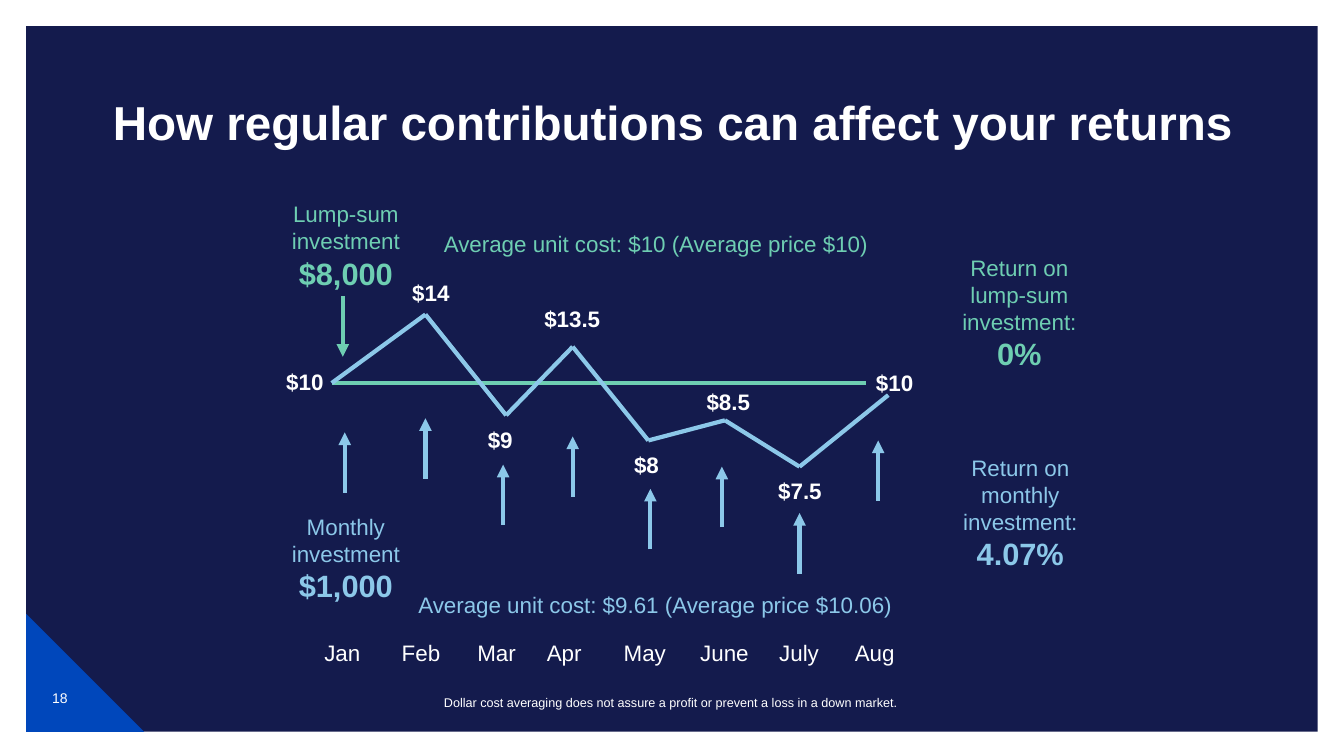
import itertools

import lxml.etree
import pptx
import pptx.dml.color
import pptx.enum.shapes
import pptx.enum.text
import pptx.oxml.ns
import pptx.util

PX = 9144
COLORS = {
    "navy": "141B4D",
    "blue": "0047BB",
    "sky": "8CC8E9",
    "mint": "6ECEB2",
    "white": "FFFFFF",
}
PRICES = [
    ("$10", 274, 360),
    ("$14", 399, 272),
    ("$9", 474, 418),
    ("$13.5", 530, 298),
    ("$8", 619, 443),
    ("$8.5", 691, 380),
    ("$7.5", 762, 468),
    ("$10", 859, 361),
]
PRICE_POINTS = [
    (329, 380), (422, 312), (502, 412), (568, 344),
    (643, 437), (719, 417), (793, 463), (881, 392),
]
MONTHS = [
    ("Jan", 305), ("Feb", 383), ("Mar", 458), ("Apr", 525),
    ("May", 605), ("June", 684), ("July", 758), ("Aug", 833),
]
MONTHLY_ARROWS = [
    (342, 489), (422, 475), (499, 521), (568, 493),
    (645, 545), (716, 523), (793, 569), (871, 497),
]
ARROW_LENGTH = 60
CALLOUTS = [
    ("Lump-sum investment ", "$8,000", 274, 194, 138, 101, "mint"),
    ("Monthly investment ", "$1,000", 274, 504, 138, 101, "sky"),
    ("Return on lump-sum investment: ", "0%", 925, 247, 172, 128, "mint"),
    ("Return on monthly investment: ", "4.07%", 926, 446, 172, 128, "sky"),
]


class Slide:
    """Draws styled elements on one page, measured in px."""

    font = "Arial"
    line_width = 3

    def __init__(self, page):
        self.page = page

    def color(self, name):
        return pptx.dml.color.RGBColor.from_string(COLORS[name])

    def shape(self, kind, left, top, width, height, color):
        shape = self.page.shapes.add_shape(
            kind, left * PX, top * PX, width * PX, height * PX)
        shape.shadow.inherit = False
        shape.fill.solid()
        shape.fill.fore_color.rgb = self.color(color)
        shape.line.fill.background()

    def line(self, start, end, color, arrow=False):
        connector = self.page.shapes.add_connector(
            pptx.enum.shapes.MSO_CONNECTOR.STRAIGHT,
            *(value * PX for value in (*start, *end)))
        connector.line.color.rgb = self.color(color)
        connector.line.width = pptx.util.Pt(self.line_width)
        qn = pptx.oxml.ns.qn
        properties = connector.element.spPr
        if arrow:
            outline = properties.find(qn("a:ln"))
            lxml.etree.SubElement(outline, qn("a:tailEnd"), type="triangle")
        lxml.etree.SubElement(properties, qn("a:effectLst"))

    def style(self, span, size, color, bold):
        span.font.name = self.font
        span.font.size = pptx.util.Pt(size)
        span.font.bold = bold
        span.font.color.rgb = self.color(color)

    def text(self, words, left, top, width, height, size=16, color="white",
             bold=False, centered=True, middle=False, heading=False):
        box = self.page.shapes.add_textbox(
            left * PX, top * PX, width * PX, height * PX)
        frame = box.text_frame
        frame.word_wrap = True
        frame.text = words
        if middle:
            frame.vertical_anchor = pptx.enum.text.MSO_ANCHOR.MIDDLE
        para = frame.paragraphs[0]
        if centered:
            para.alignment = pptx.enum.text.PP_ALIGN.CENTER
        if heading:
            frame.margin_left = frame.margin_right = 0
            para.line_spacing = 0.9
        self.style(para.runs[0], size, color, bold)
        return para

    def callout(self, label, amount, left, top, width, height, color):
        para = self.text(label, left, top, width, height, color=color)
        span = para.add_run()
        span.text = amount
        self.style(span, 22, color, True)


def main():
    deck = pptx.Presentation()
    deck.slide_width = 1333 * PX
    deck.slide_height = 750 * PX
    slide = Slide(deck.slides.add_slide(deck.slide_layouts[6]))
    shapes = pptx.enum.shapes.MSO_SHAPE

    slide.shape(shapes.RECTANGLE, 26, 26, 1281, 700, "navy")
    slide.shape(shapes.RIGHT_TRIANGLE, 26, 609, 117, 117, "blue")
    slide.text("18", 32, 663, 55, 58, size=10, middle=True)
    slide.text("How regular contributions can affect your returns",
               28, 94, 1279, 57, size=34, bold=True, heading=True)

    slide.line((329, 380), (859, 380), "mint")
    for start, end in itertools.pairwise(PRICE_POINTS):
        slide.line(start, end, "sky")
    slide.line((340, 294), (340, 294 + ARROW_LENGTH), "mint", arrow=True)
    for x, y in MONTHLY_ARROWS:
        slide.line((x, y), (x, y - ARROW_LENGTH), "sky", arrow=True)

    slide.text("Average unit cost: $9.61 (Average price $10.06)",
               405, 582, 511, 37, color="sky", centered=False)
    for callout in CALLOUTS:
        slide.callout(*callout)
    for month, left in MONTHS:
        slide.text(month, left, 629, 69, 37)
    for price, left, top in PRICES:
        slide.text(price, left, top, 80, 37, bold=True, centered=False)
    slide.text("Average unit cost: $10 (Average price $10)",
               399, 226, 503, 34, color="mint", heading=True)
    slide.text("Dollar cost averaging does not assure a profit or prevent "
               "a loss in a down market.", 274, 684, 782, 25, size=9)
    deck.save("out.pptx")


if __name__ == "__main__":
    main()
